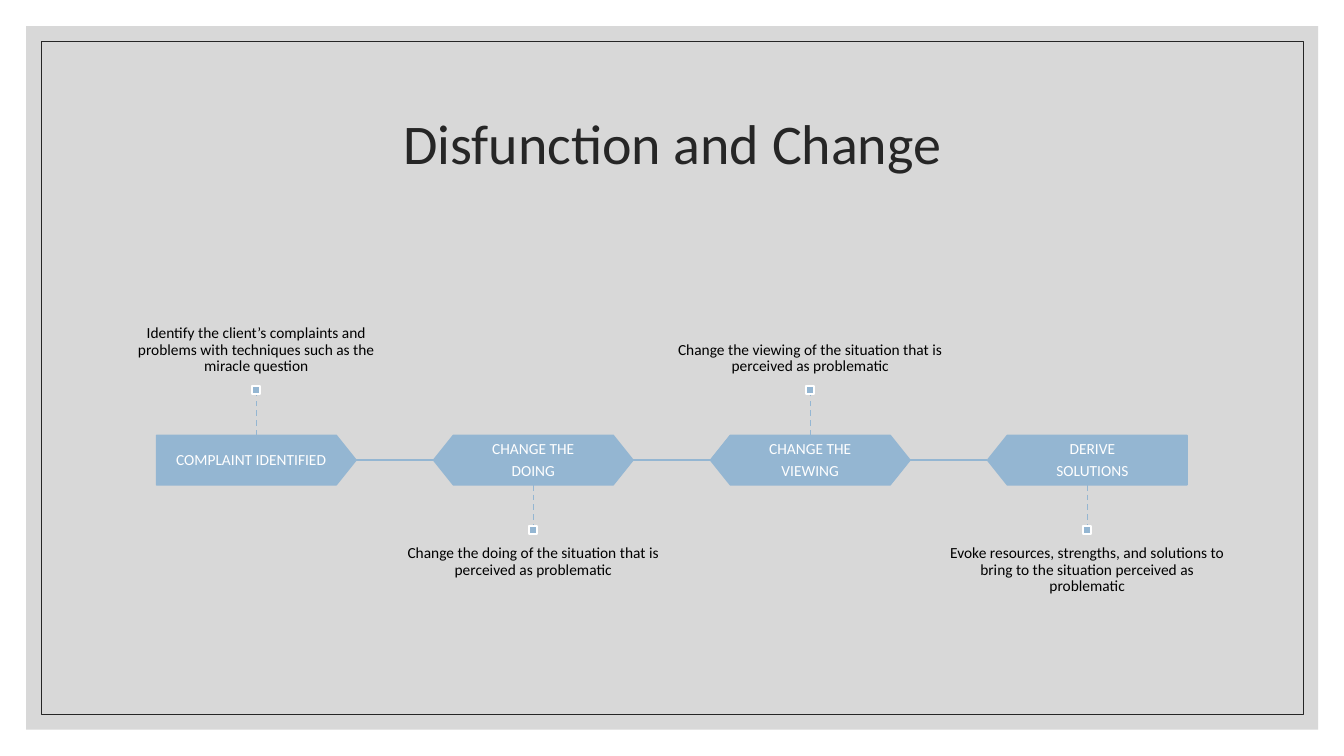
from dataclasses import dataclass

from lxml import etree
from pptx import Presentation
from pptx.dml.color import RGBColor
from pptx.enum.dml import MSO_LINE
from pptx.enum.shapes import MSO_CONNECTOR, MSO_SHAPE
from pptx.enum.text import MSO_ANCHOR, PP_ALIGN
from pptx.oxml.ns import qn
from pptx.util import Cm, Pt

RECT, PLATE, HEX = MSO_SHAPE.RECTANGLE, MSO_SHAPE.PENTAGON, MSO_SHAPE.HEXAGON
STRAIGHT, DASH = MSO_CONNECTOR.STRAIGHT, MSO_LINE.DASH
TOP, MID, LOW = MSO_ANCHOR.TOP, MSO_ANCHOR.MIDDLE, MSO_ANCHOR.BOTTOM
CENTER = PP_ALIGN.CENTER


@dataclass(frozen=True)
class Theme:
    font: str = "Calibri"
    blue: str = "94B6D2"
    gray: str = "BFBFBF"
    dark: str = "262626"
    black: str = "000000"
    white: str = "FFFFFF"
    head: float = 40
    body: float = 11


def write(frame, text, *, font, size, color, anchor=MID, inset=(0.25, 0.13), after=0):
    """Fill a text frame, one centred paragraph per line."""
    frame.word_wrap = True
    frame.vertical_anchor = anchor
    frame.margin_left = frame.margin_right = Cm(inset[0])
    frame.margin_top = frame.margin_bottom = Cm(inset[1])
    for i, line in enumerate(text.split("\n")):
        para = frame.add_paragraph() if i else frame.paragraphs[0]
        para.alignment = CENTER
        para.line_spacing = 0.9
        para.space_after = Pt(after)
        run = para.add_run()
        run.text = line
        run.font.name = font
        run.font.size = Pt(size)
        run.font.color.rgb = RGBColor.from_string(color)


class Painter:
    def __init__(self, slide, theme):
        self.slide, self.theme = slide, theme

    def shape(self, kind, x, y, w, h, fill=None, line=None, width=1, alpha=None):
        item = self.slide.shapes.add_shape(kind, Cm(x), Cm(y), Cm(w), Cm(h))
        item.shadow.inherit = False
        if fill:
            item.fill.solid()
            item.fill.fore_color.rgb = RGBColor.from_string(fill)
        else:
            item.fill.background()
        if alpha:
            color = item.fill._xPr.find(qn("a:solidFill"))[0]
            etree.SubElement(color, qn("a:alpha"), val=str(alpha * 1000))
        if line:
            item.line.color.rgb = RGBColor.from_string(line)
            item.line.width = Pt(width)
        else:
            item.line.fill.background()
        return item

    def line(self, x1, y1, x2, y2, dash=None):
        item = self.slide.shapes.add_connector(STRAIGHT, Cm(x1), Cm(y1), Cm(x2), Cm(y2))
        item.line.color.rgb = RGBColor.from_string(self.theme.blue)
        item.line.width = Pt(1)
        if dash:
            item.line.dash_style = dash
        etree.SubElement(item._element.spPr, qn("a:effectLst"))
        return item

    def text(self, text, x, y, w, h, **form):
        box = self.slide.shapes.add_textbox(Cm(x), Cm(y), Cm(w), Cm(h))
        write(box.text_frame, text, font=self.theme.font, **form)


# Kind, turn, label shift, label, detail
STEPS = [
    (PLATE, 0, -0.13, "COMPLAINT IDENTIFIED",
     "Identify the client’s complaints and problems with techniques such as the miracle question"),
    (HEX, 0, 0, "CHANGE THE\nDOING",
     "Change the doing of the situation that is perceived as problematic"),
    (HEX, 0, 0, "CHANGE THE\nVIEWING",
     "Change the viewing of the situation that is perceived as problematic"),
    (PLATE, 180, 0.13, "DERIVE\nSOLUTIONS",
     "Evoke resources, strengths, and solutions to bring to the situation perceived as problematic"),
]

FIRST, PITCH = 6.46, 6.98    # centre of the first step, distance between steps
BAR_Y, BAR_W, BAR_H = 10.97, 5.03, 1.25
STEM, DOT = 1.04, 0.2
NOTE_H = 3.3


def main():
    deck = Presentation()
    deck.slide_width, deck.slide_height = Cm(33.87), Cm(19.05)
    theme = Theme()
    art = Painter(deck.slides.add_slide(deck.slide_layouts[6]), theme)

    # Backdrop and frame
    art.shape(RECT, 0.66, 0.66, 32.56, 17.73, fill=theme.gray, alpha=60)
    art.shape(RECT, 1.04, 1.04, 31.8, 16.97, line=theme.dark, width=0.5)

    # Title
    art.text("Disfunction and Change", 2.97, 1.78, 27.94, 3.81,
             size=theme.head, color=theme.dark)

    # Timeline: notes alternate above and below the bars
    for i, (kind, turn, shift, label, note) in enumerate(STEPS):
        mid = FIRST + i * PITCH
        above = i % 2 == 0

        # Bar and label
        bar = art.shape(kind, mid - BAR_W / 2, BAR_Y, BAR_W, BAR_H,
                        fill=theme.blue, line=theme.blue)
        bar.adjustments[0] = 0.4
        bar.rotation = turn
        art.text(label, mid - 2.39 + shift, BAR_Y, 4.78, BAR_H, size=theme.body,
                 color=theme.white, inset=(0.23, 0.23), after=3.9)

        # Link to the next bar
        if i < len(STEPS) - 1:
            y = BAR_Y + BAR_H / 2
            art.line(mid + BAR_W / 2, y, mid + PITCH - BAR_W / 2, y)

        # Stem, marker and note
        edge = BAR_Y if above else BAR_Y + BAR_H
        dot_y = edge - STEM - DOT if above else edge + STEM
        stem = art.line(mid, edge, mid, dot_y, dash=DASH)
        dot = art.shape(RECT, mid - DOT / 2, dot_y, DOT, DOT,
                        fill=theme.blue, line=theme.white, width=1.5)
        stem.end_connect(dot, 2 if above else 0)
        note_y = dot_y - NOTE_H if above else dot_y + DOT
        art.text(note, mid - PITCH / 2, note_y, PITCH, NOTE_H, size=theme.body,
                 color=theme.black, anchor=LOW if above else TOP,
                 inset=(0, 0.28), after=3.9)

    deck.save("out.pptx")


if __name__ == "__main__":
    main()
